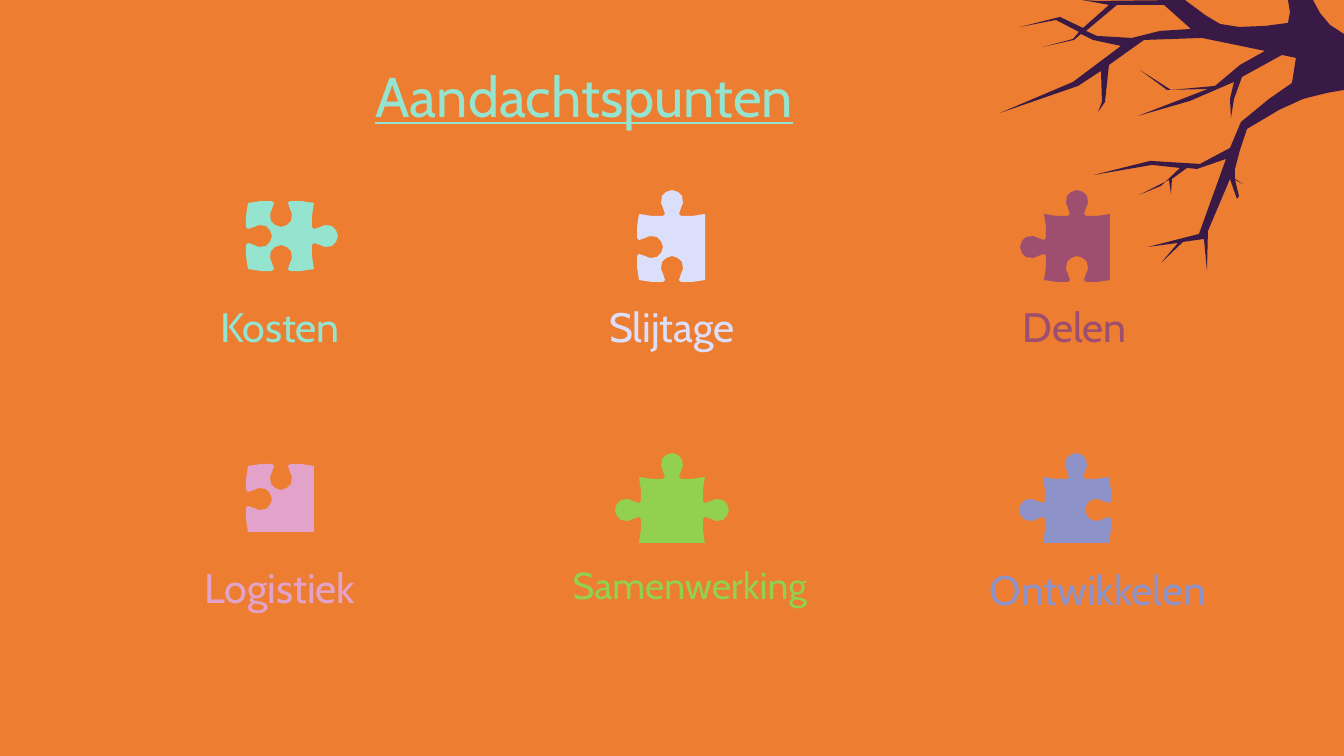
from pptx import Presentation
from pptx.dml.color import RGBColor
from pptx.enum.text import MSO_ANCHOR, MSO_AUTO_SIZE, PP_ALIGN
from pptx.util import Inches, Pt

PX = Inches(1) / 134.4
FONT = "Cabin"

ORANGE = RGBColor(0xED, 0x7D, 0x31)
BARK = RGBColor(0x39, 0x1A, 0x47)
MINT = RGBColor(0x94, 0xE4, 0xCF)
LAVENDER = RGBColor(0xDC, 0xDF, 0xFA)
PLUM = RGBColor(0x9E, 0x4E, 0x6F)
PINK = RGBColor(0xE2, 0xA2, 0xC9)
GREEN = RGBColor(0x92, 0xD0, 0x50)
PERIWINKLE = RGBColor(0x8D, 0x93, 0xC9)

# Half a puzzle edge from corner to tip: (along the edge, outward)
HALF_SIDE = 33
HALF_EDGE = [
    (-HALF_SIDE, 0), (-20, -2), (-9, -2), (-7, 0), (-9, 6),
    (-11, 11), (-10, 18), (-6, 22), (0, 24),
]
# The far half mirrors the near one; the next side starts at its last corner
EDGE = HALF_EDGE + [(-along, out) for along, out in HALF_EDGE[-2:0:-1]]
TAB, FLAT, BLANK = 1, 0, -1

# Word, colour, piece centre, sides (top, right, bottom, left), label box, size
POINTS = [
    ("Kosten", MINT, (281, 236), (BLANK, TAB, BLANK, BLANK), (151, 281, 258, 67), 22),
    ("Slijtage", LAVENDER, (672, 247), (TAB, FLAT, BLANK, BLANK), (543, 281, 258, 67), 22),
    ("Delen", PLUM, (1077, 247), (TAB, FLAT, BLANK, TAB), (895, 281, 359, 69), 22),
    ("Logistiek", PINK, (281, 499), (BLANK, FLAT, FLAT, BLANK), (151, 542, 258, 67), 22),
    ("Samenwerking", GREEN, (672, 510), (TAB, TAB, FLAT, TAB), (540, 542, 300, 67), 20),
    ("Ontwikkelen", PERIWINKLE, (1076, 510), (TAB, BLANK, FLAT, TAB), (910, 544, 376, 69), 22),
]

BRANCH = [
    (1313, 0), (1320, 13), (1330, 25), (1344, 34), (1344, 90), (1327, 93), (1303, 99),
    (1279, 110), (1247, 129), (1240, 150), (1235, 169), (1235, 179), (1243, 184),
    (1235, 180), (1239, 196), (1237, 199), (1230, 179), (1208, 231), (1207, 271),
    (1204, 239), (1183, 242), (1161, 263), (1178, 243), (1148, 247), (1199, 234),
    (1226, 159), (1197, 169), (1187, 168), (1172, 179), (1171, 194), (1169, 180),
    (1139, 195), (1161, 186), (1180, 168), (1152, 165), (1094, 175), (1150, 161),
    (1200, 164), (1230, 148), (1241, 122), (1269, 99), (1292, 83), (1296, 58),
    (1282, 55), (1242, 77), (1234, 99), (1231, 118), (1230, 99), (1234, 82),
    (1190, 101), (1138, 116), (1208, 89), (1167, 90), (1140, 70), (1171, 90),
    (1215, 86), (1240, 65), (1265, 51), (1202, 38), (1144, 40), (1109, 65),
    (1105, 102), (1098, 112), (1102, 102), (1101, 71), (1078, 86), (1000, 113),
    (1073, 82), (1121, 46), (1093, 40), (1081, 34), (1074, 40), (1043, 47),
    (1073, 39), (1079, 32), (1056, 20), (1020, 27), (1060, 17), (1083, 28),
    (1109, 5), (1082, 0), (1097, 1), (1185, 0), (1205, 15), (1220, 24),
    (1239, 27), (1265, 26), (1288, 23), (1290, 12), (1288, 0),
]
BRANCH_GAP = [
    (1164, 5), (1117, 5), (1086, 31), (1097, 36), (1132, 38), (1160, 31), (1191, 29),
]


def px(length):
    return round(length * PX)


def write_text(frame, text, *, size, color, align=PP_ALIGN.LEFT, anchor=MSO_ANCHOR.TOP,
               underline=None, line_spacing=None, space_after=None):
    frame.word_wrap = True
    frame.auto_size = MSO_AUTO_SIZE.NONE
    frame.vertical_anchor = anchor
    frame.margin_left = frame.margin_right = Inches(0.1)
    frame.margin_top = frame.margin_bottom = Inches(0.1)
    paragraph = frame.paragraphs[0]
    paragraph.alignment = align
    paragraph.line_spacing = line_spacing
    paragraph.space_after = space_after
    run = paragraph.add_run()
    run.text = text
    run.font.name = FONT
    run.font.size = Pt(size)
    run.font.color.rgb = color
    run.font.underline = underline


def add_outline(slide, color, first, *holes):
    builder = slide.shapes.build_freeform(*first[0], scale=PX)
    builder.add_line_segments(first[1:], close=True)
    for hole in holes:
        builder.move_to(*hole[0])
        builder.add_line_segments(hole[1:], close=True)
    outline = builder.convert_to_shape()
    outline.fill.solid()
    outline.fill.fore_color.rgb = color
    outline.line.fill.background()
    outline.shadow.inherit = False


def add_puzzle_piece(slide, center, sides, color):
    center_x, center_y = center
    outline = []
    # Each side is the top side after quarter turns clockwise
    for turns, kind in enumerate(sides):
        for along, out in EDGE if kind else EDGE[:1]:
            x, y = along, -HALF_SIDE - kind * out
            for _ in range(turns):
                x, y = -y, x
            outline.append((center_x + x, center_y + y))
    add_outline(slide, color, outline)


def add_label(slide, text, box, size, color):
    label = slide.shapes.add_textbox(*map(px, box))
    write_text(label.text_frame, text, size=size, color=color, align=PP_ALIGN.CENTER,
               line_spacing=1.15, space_after=Pt(16))


def place_title(slide, text):
    title = slide.shapes.title
    title.left, title.top, title.width, title.height = map(px, (362, 58, 1070, 74))
    write_text(title.text_frame, text, size=30, color=MINT, anchor=MSO_ANCHOR.MIDDLE,
               underline=True)


def main():
    prs = Presentation()
    prs.slide_width, prs.slide_height = px(1344), px(756)
    slide = prs.slides.add_slide(prs.slide_layouts[5])

    # Background and branch
    slide.background.fill.solid()
    slide.background.fill.fore_color.rgb = ORANGE
    add_outline(slide, BARK, BRANCH, BRANCH_GAP)

    # Title
    place_title(slide, "Aandachtspunten")

    # Puzzle pieces with their words
    for word, color, center, sides, box, size in POINTS:
        add_puzzle_piece(slide, center, sides, color)
        add_label(slide, word, box, size, color)

    prs.save("out.pptx")


if __name__ == "__main__":
    main()
